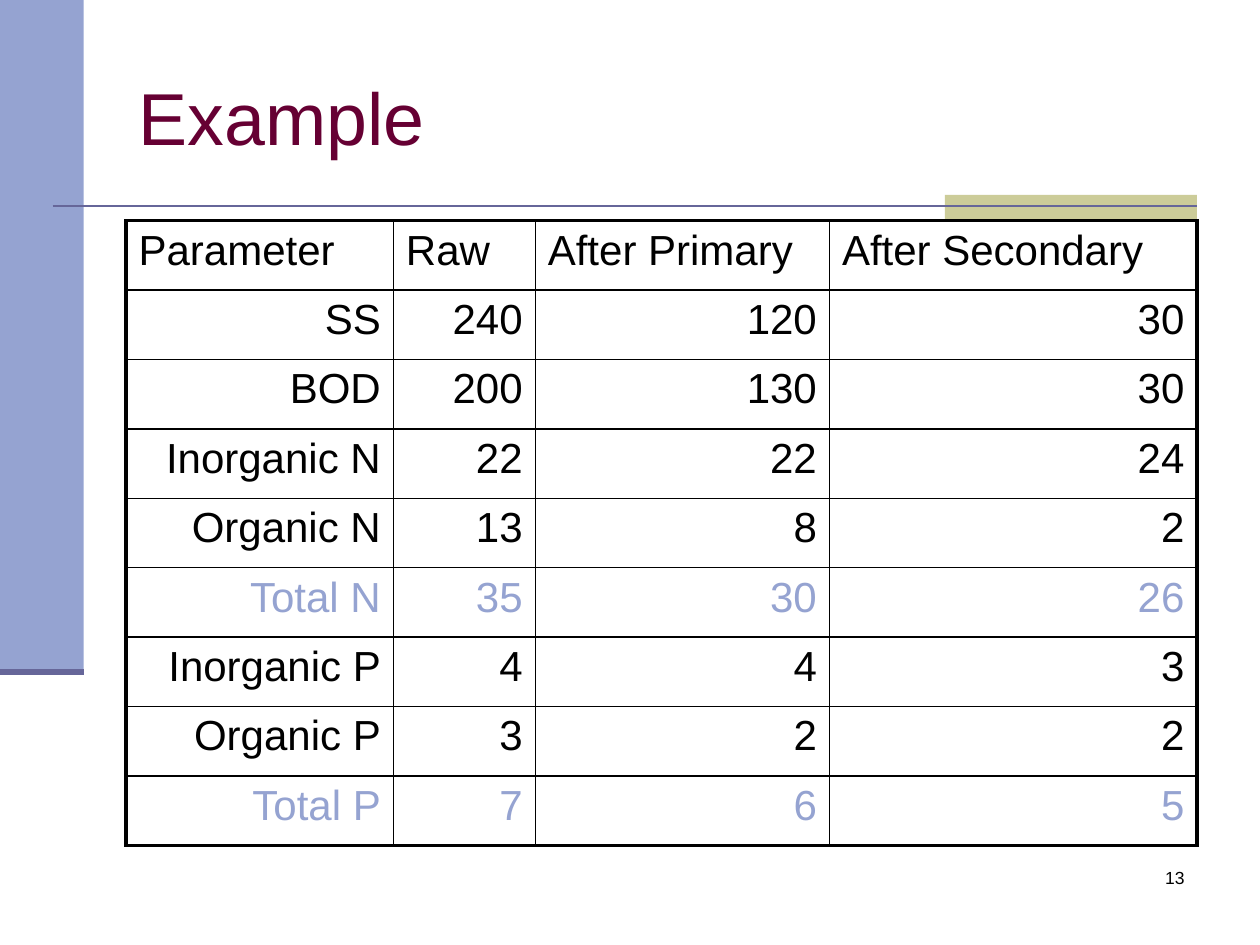
from dataclasses import dataclass

from lxml.etree import SubElement
from pptx import Presentation
from pptx.dml.color import RGBColor
from pptx.enum.shapes import MSO_CONNECTOR, MSO_SHAPE
from pptx.enum.text import MSO_ANCHOR, PP_ALIGN
from pptx.oxml.ns import qn
from pptx.util import Cm, Pt


@dataclass(frozen=True)
class Theme:
    font: str = "Arial"
    text: str = "000000"
    title: str = "660033"
    band: str = "95A3D1"
    tab: str = "CCCC99"
    rule: str = "666699"
    title_size: float = 42
    table_size: float = 24
    number_size: float = 10
    outer_border: float = 2.25
    inner_border: float = 1


THEME = Theme()
COLUMN_WIDTHS = (5.39, 2.86, 5.93, 7.41)
ROW_HEIGHT = 1.4
ROWS = (
    ("Parameter", "Raw", "After Primary", "After Secondary"),
    ("SS", "240", "120", "30"),
    ("BOD", "200", "130", "30"),
    ("Inorganic N", "22", "22", "24"),
    ("Organic N", "13", "8", "2"),
    ("Total N", "35", "30", "26"),
    ("Inorganic P", "4", "4", "3"),
    ("Organic P", "3", "2", "2"),
    ("Total P", "7", "6", "5"),
)


def write_text(text_frame, text, *, size, color=THEME.text,
               align=PP_ALIGN.LEFT, anchor=MSO_ANCHOR.TOP):
    text_frame.word_wrap = True
    text_frame.vertical_anchor = anchor
    paragraph = text_frame.paragraphs[0]
    paragraph.alignment = align
    run = paragraph.add_run()
    run.text = text
    run.font.name = THEME.font
    run.font.size = Pt(size)
    run.font.color.rgb = RGBColor.from_string(color)


def add_block(slide, left, top, width, height, color):
    shape = slide.shapes.add_shape(
        MSO_SHAPE.RECTANGLE, Cm(left), Cm(top), Cm(width), Cm(height))
    shape.shadow.inherit = False
    shape.fill.solid()
    shape.fill.fore_color.rgb = RGBColor.from_string(color)
    shape.line.fill.background()
    return shape


def add_rule(slide, left, right, y, weight):
    connector = slide.shapes.add_connector(
        MSO_CONNECTOR.STRAIGHT, Cm(left), Cm(y), Cm(right), Cm(y))
    connector.line.color.rgb = RGBColor.from_string(THEME.rule)
    connector.line.width = Pt(weight)
    SubElement(connector._element.spPr, qn("a:effectLst"))


def set_title(slide, text):
    title = slide.shapes.title
    title.left, title.top = Cm(2.54), Cm(0.76)
    title.width, title.height = Cm(21.59), Cm(3.18)
    write_text(title.text_frame, text, size=THEME.title_size,
               color=THEME.title, anchor=MSO_ANCHOR.MIDDLE)


def add_slide_number(slide, text):
    box = slide.shapes.add_textbox(Cm(18.85), Cm(17.35), Cm(5.28), Cm(1.27))
    write_text(box.text_frame, text, size=THEME.number_size,
               align=PP_ALIGN.RIGHT)


def set_borders(cell, outer_sides):
    properties = cell._tc.get_or_add_tcPr()
    for side, is_outer in outer_sides.items():
        weight = THEME.outer_border if is_outer else THEME.inner_border
        line = SubElement(properties, qn(f"a:ln{side}"), w=str(Pt(weight)))
        fill = SubElement(line, qn("a:solidFill"))
        SubElement(fill, qn("a:srgbClr"), val=THEME.text)


def add_results_table(slide):
    last_row, last_column = len(ROWS) - 1, len(COLUMN_WIDTHS) - 1
    table = slide.shapes.add_table(
        len(ROWS), len(COLUMN_WIDTHS), Cm(2.54), Cm(4.45),
        Cm(sum(COLUMN_WIDTHS)), Cm(ROW_HEIGHT * len(ROWS))).table
    table.first_row = False
    table.horz_banding = False
    for column, width in zip(table.columns, COLUMN_WIDTHS):
        column.width = Cm(width)
    for row_index, values in enumerate(ROWS):
        table.rows[row_index].height = Cm(ROW_HEIGHT)
        is_total = values[0].startswith("Total")
        for column_index, value in enumerate(values):
            cell = table.cell(row_index, column_index)
            write_text(cell.text_frame, value, size=THEME.table_size,
                       color=THEME.band if is_total else THEME.text,
                       align=PP_ALIGN.RIGHT if row_index else PP_ALIGN.LEFT)
            set_borders(cell, {
                "L": column_index == 0,
                "R": column_index == last_column,
                "T": row_index == 0,
                "B": row_index == last_row,
            })
            cell.fill.background()


def main():
    presentation = Presentation()
    presentation.slide_width, presentation.slide_height = Cm(25.4), Cm(19.05)
    slide = presentation.slides.add_slide(presentation.slide_layouts[5])
    add_block(slide, 0, 0, 1.69, 13.55, THEME.band)
    add_block(slide, 19.05, 3.93, 5.08, 0.51, THEME.tab)
    add_rule(slide, 1.06, 24.13, 4.15, 1.5)
    add_rule(slide, 0, 1.69, 13.55, 3.5)
    add_slide_number(slide, "13")
    set_title(slide, "Example")
    add_results_table(slide)
    presentation.save("out.pptx")


if __name__ == "__main__":
    main()
